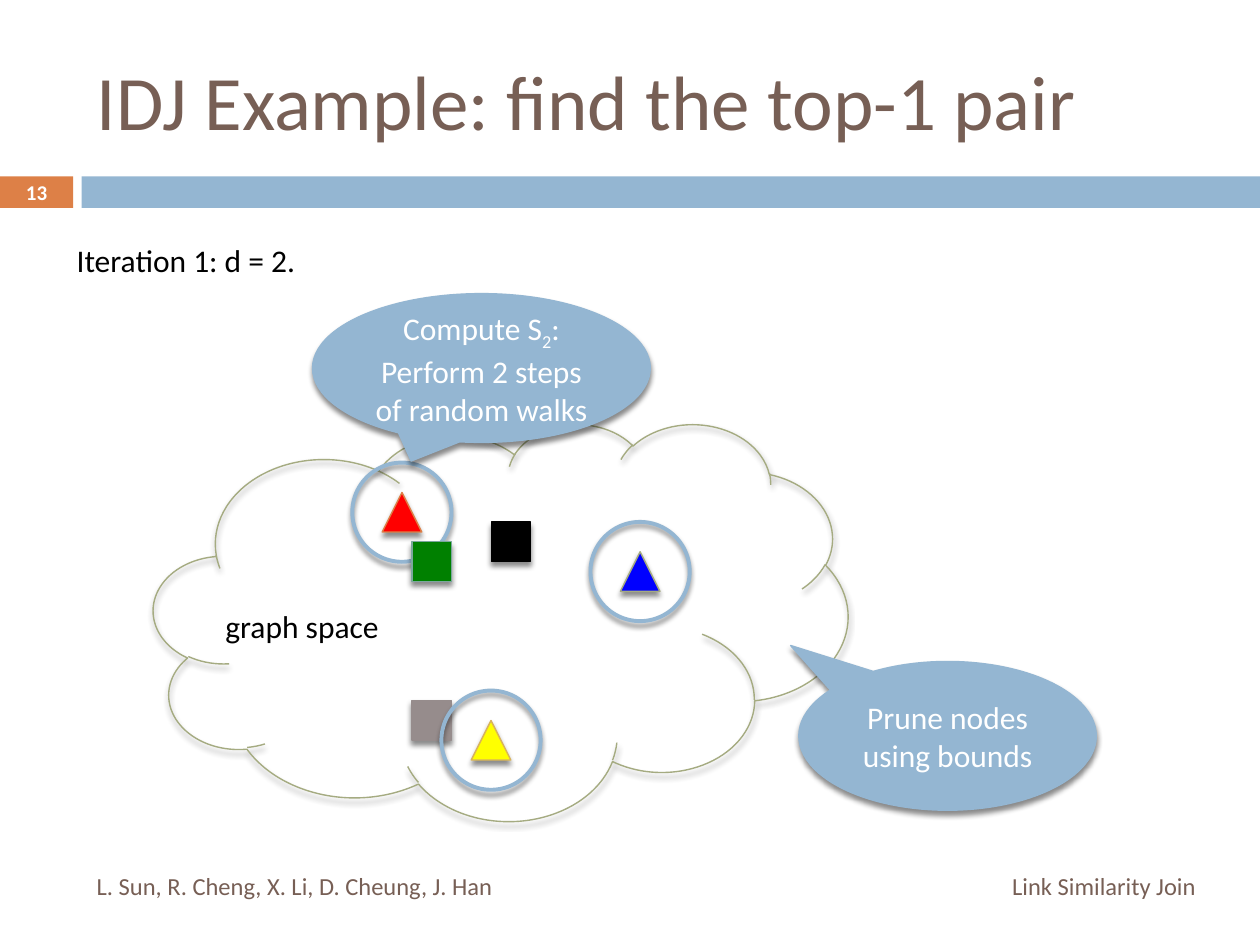
from dataclasses import dataclass
from typing import Optional

from lxml.etree import SubElement
from pptx import Presentation
from pptx.dml.color import RGBColor
from pptx.enum.shapes import MSO_SHAPE as Preset
from pptx.enum.text import MSO_ANCHOR as Anchor, PP_ALIGN as Align
from pptx.oxml.ns import qn
from pptx.util import Pt


@dataclass(frozen=True)
class Theme:
    """Colours, font and sizes of the deck."""
    font: str = "Calibri"
    blue: str = "94B6D2"
    orange: str = "DD8047"
    olive: str = "A5AB81"
    gold: str = "D8B25C"
    teal: str = "7BA79D"
    brown: str = "775F55"
    gray: str = "968C8C"
    black: str = "000000"
    white: str = "FFFFFF"
    red: str = "FF0000"
    green: str = "008000"
    pure_blue: str = "0000FF"
    yellow: str = "FFFF00"
    title_size: float = 44
    body_size: float = 18
    footer_size: float = 14
    number_size: float = 12
    thin_line: float = 0.79
    ring_line: float = 2.25


@dataclass(frozen=True)
class Box:
    """A rectangle on the slide, in points."""
    left: float
    top: float
    width: float
    height: float


@dataclass(frozen=True)
class Node:
    """A graph node, placed by its centre."""
    preset: Preset
    x: float
    y: float
    fill: str
    line: str


@dataclass(frozen=True)
class Callout:
    """A speech bubble with its pointer offsets."""
    box: Box
    text: str
    pointer: tuple[float, float]
    subscript: str = ""


@dataclass(frozen=True)
class Label:
    """A line of free text."""
    box: Box
    text: str
    size: float
    color: str
    align: Align = Align.LEFT
    anchor: Anchor = Anchor.MIDDLE
    bold: bool = False
    margin: float = 7.2


THEME = Theme()
NODE_SIZE = 22.6
RING_SIZE = 56.7

BANDS = [(Box(0, 100.8, 41.8, 18), THEME.orange), (Box(46.6, 100.8, 673.4, 18), THEME.blue)]
CLOUD = Box(87.8, 241.9, 396.7, 226.8)
SQUARES = [
    Node(Preset.RECTANGLE, 292, 309.5, THEME.black, THEME.black),
    Node(Preset.RECTANGLE, 246.7, 411.6, THEME.gray, THEME.gray),
]
TRIANGLES = [
    Node(Preset.ISOSCELES_TRIANGLE, 365.8, 326.6, THEME.pure_blue, THEME.olive),
    Node(Preset.ISOSCELES_TRIANGLE, 229.7, 292.7, THEME.red, THEME.orange),
    Node(Preset.ISOSCELES_TRIANGLE, 280.6, 423, THEME.yellow, THEME.gold),
]
FRONT_SQUARE = Node(Preset.RECTANGLE, 246.7, 320.9, THEME.green, THEME.teal)
CALLOUTS = [
    Callout(Box(178.6, 167.8, 193, 85), "Compute S2: Perform 2 steps of random walks",
            (-0.208, 0.625), subscript="2"),
    Callout(Box(456.5, 378, 170, 85), "Prune nodes using bounds", (-0.528, -0.608)),
]
LABELS = [
    Label(Box(48.2, 18, 642.2, 77.8), "IDJ Example: find the top-1 pair",
          THEME.title_size, THEME.brown),
    Label(Box(36.7, 133.9, 147.6, 29), "Iteration 1: d = 2.",
          THEME.body_size, THEME.black, anchor=Anchor.TOP),
    Label(Box(121.7, 343.6, 221, 29), "graph space",
          THEME.body_size, THEME.black, anchor=Anchor.TOP),
    Label(Box(0, 100.1, 41.8, 19.4), "13", THEME.number_size, THEME.white,
          align=Align.CENTER, bold=True, margin=0),
    Label(Box(480.2, 491.8, 210.2, 28.8), "Link Similarity Join",
          THEME.footer_size, THEME.brown, align=Align.RIGHT),
    Label(Box(48.2, 491.8, 427, 28.8), "L. Sun, R. Cheng, X. Li, D. Cheung, J. Han",
          THEME.footer_size, THEME.brown),
]


def place(box: Box) -> tuple[Pt, Pt, Pt, Pt]:
    """Return the box as lengths for python-pptx."""
    return Pt(box.left), Pt(box.top), Pt(box.width), Pt(box.height)


def square_box(x: float, y: float, size: float) -> Box:
    """Return a square box around a centre."""
    return Box(x - size / 2, y - size / 2, size, size)


def add_shadow(shape) -> None:
    """Give a shape a soft shadow falling straight down."""
    effects = shape._element.spPr.find(qn("a:effectLst"))
    shadow = SubElement(effects, qn("a:outerShdw"), blurRad=str(Pt(3)), dist=str(Pt(2.4)),
                        dir="5400000", rotWithShape="0")
    color = SubElement(shadow, qn("a:srgbClr"), val=THEME.black)
    SubElement(color, qn("a:alpha"), val="45000")


def add_shape(slide, preset: Preset, box: Box, *, fill: Optional[str] = None,
              line: Optional[str] = None, weight: float = THEME.thin_line, shadow: bool = True):
    """Add a preset shape with its fill, outline and shadow."""
    shape = slide.shapes.add_shape(preset, *place(box))
    if fill:
        shape.fill.solid()
        shape.fill.fore_color.rgb = RGBColor.from_string(fill)
    else:
        shape.fill.background()
    if line:
        shape.line.color.rgb = RGBColor.from_string(line)
        shape.line.width = Pt(weight)
    else:
        shape.line.fill.background()
    shape.shadow.inherit = False
    if shadow:
        add_shadow(shape)
    return shape


def write_text(frame, text: str, *, size: float, color: str, align: Align = Align.LEFT,
               anchor: Anchor = Anchor.MIDDLE, bold: bool = False, subscript: str = "") -> None:
    """Write one paragraph, lowering the first match of the subscript."""
    frame.word_wrap = True
    frame.vertical_anchor = anchor
    paragraph = frame.paragraphs[0]
    paragraph.alignment = align
    pieces = text.partition(subscript) if subscript else (text,)
    for position, piece in enumerate(pieces):
        run = paragraph.add_run()
        run.text = piece
        run.font.name = THEME.font
        run.font.size = Pt(size)
        run.font.bold = bold
        run.font.color.rgb = RGBColor.from_string(color)
        if position == 1:
            run._r.get_or_add_rPr().set("baseline", "-25000")


def add_node(slide, node: Node) -> None:
    """Draw a graph node."""
    add_shape(slide, node.preset, square_box(node.x, node.y, NODE_SIZE),
              fill=node.fill, line=node.line)


def add_ring(slide, node: Node) -> None:
    """Circle a graph node."""
    add_shape(slide, Preset.OVAL, square_box(node.x, node.y, RING_SIZE),
              line=THEME.blue, weight=THEME.ring_line)


def add_callout(slide, callout: Callout) -> None:
    """Draw a speech bubble with its text."""
    shape = add_shape(slide, Preset.OVAL_CALLOUT, callout.box, fill=THEME.blue, line=THEME.blue)
    for index, offset in enumerate(callout.pointer):
        shape.adjustments[index] = offset
    write_text(shape.text_frame, callout.text, size=THEME.body_size, color=THEME.white,
               align=Align.CENTER, subscript=callout.subscript)


def add_label(slide, label: Label) -> None:
    """Draw a text box."""
    frame = slide.shapes.add_textbox(*place(label.box)).text_frame
    frame.margin_left = frame.margin_right = Pt(label.margin)
    write_text(frame, label.text, size=label.size, color=label.color, align=label.align,
               anchor=label.anchor, bold=label.bold)


def main() -> None:
    """Build and save the slide."""
    presentation = Presentation()
    presentation.slide_width, presentation.slide_height = Pt(720), Pt(540)
    slide = presentation.slides.add_slide(presentation.slide_layouts[6])
    for box, color in BANDS:
        add_shape(slide, Preset.RECTANGLE, box, fill=color, shadow=False)
    add_shape(slide, Preset.CLOUD, CLOUD, line=THEME.olive)
    for node in SQUARES:
        add_node(slide, node)
    for node in TRIANGLES:
        add_ring(slide, node)
    for node in [*TRIANGLES, FRONT_SQUARE]:
        add_node(slide, node)
    for callout in CALLOUTS:
        add_callout(slide, callout)
    for label in LABELS:
        add_label(slide, label)
    presentation.save("out.pptx")


if __name__ == "__main__":
    main()
